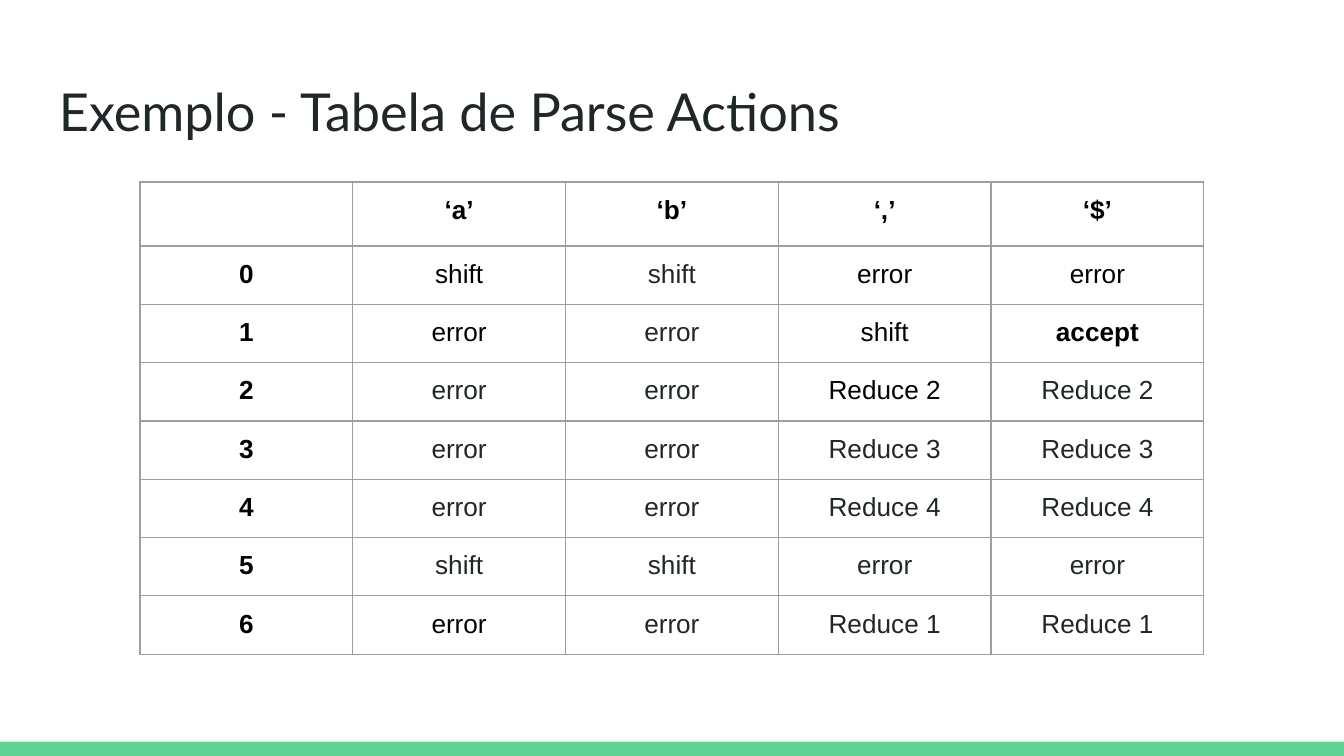
import pptx
import pptx.dml.color
import pptx.enum.shapes
import pptx.enum.text
import pptx.oxml
import pptx.oxml.ns
import pptx.util

Pt = pptx.util.Pt
CENTER = pptx.enum.text.PP_ALIGN.CENTER
LEFT = pptx.enum.text.PP_ALIGN.LEFT

# Content
HEADING = "Exemplo - Tabela de Parse Actions"
ACTIONS = [
    ("", "‘a’", "‘b’", "‘,’", "‘$’"),
    ("0", "shift", "shift", "error", "error"),
    ("1", "error", "error", "shift", "accept"),
    ("2", "error", "error", "Reduce 2", "Reduce 2"),
    ("3", "error", "error", "Reduce 3", "Reduce 3"),
    ("4", "error", "error", "Reduce 4", "Reduce 4"),
    ("5", "shift", "shift", "error", "error"),
    ("6", "error", "error", "Reduce 1", "Reduce 1"),
]
# (row, column) of the actions set in black
BLACK_ACTIONS = {(1, 1), (1, 3), (1, 4), (2, 1), (2, 3), (2, 4), (3, 3), (7, 1)}
COLORS = {"ink": "202729", "black": "000000", "band": "63D297", "border": "9E9E9E"}

# Layout, in points
SLIDE_W, SLIDE_H = 720, 405
BAND_H = 7.7
TABLE_LEFT, TABLE_TOP = 75, 97.5
COLUMN_W, HEADER_H, ROW_H = 114, 34.3, 30.1
INSET = 7.2


def rgb(name):
    return pptx.dml.color.RGBColor.from_string(COLORS[name])


def write(frame, text, font="Arial", size=14, color="ink", bold=False, align=CENTER):
    frame.word_wrap = True
    frame.margin_left = frame.margin_right = Pt(INSET)
    frame.margin_top = frame.margin_bottom = Pt(INSET)
    paragraph = frame.paragraphs[0]
    paragraph.alignment = align
    run = paragraph.add_run()
    run.text = text
    run.font.name, run.font.size, run.font.bold = font, Pt(size), bold
    run.font.color.rgb = rgb(color)


def add_borders(cell):
    properties = cell._tc.get_or_add_tcPr()
    for position, side in enumerate(("lnL", "lnR", "lnT", "lnB")):
        properties.insert(position, pptx.oxml.parse_xml(
            f'<a:{side} {pptx.oxml.ns.nsdecls("a")} w="{Pt(0.75)}"><a:solidFill>'
            f'<a:srgbClr val="{COLORS["border"]}"/></a:solidFill></a:{side}>'))


presentation = pptx.Presentation()
presentation.slide_width, presentation.slide_height = Pt(SLIDE_W), Pt(SLIDE_H)
slide = presentation.slides.add_slide(presentation.slide_layouts[6])

# Bottom band
band = slide.shapes.add_shape(
    pptx.enum.shapes.MSO_SHAPE.RECTANGLE,
    0, Pt(SLIDE_H - BAND_H), Pt(SLIDE_W), Pt(BAND_H))
band.shadow.inherit = False
band.fill.solid()
band.fill.fore_color.rgb = rgb("band")
band.line.fill.background()

# Heading
heading = slide.shapes.add_textbox(Pt(24.5), Pt(35.3), Pt(671), Pt(45.4))
write(heading.text_frame, HEADING, font="Lato", size=28, align=LEFT)

# Table of parse actions
row_count, column_count = len(ACTIONS), len(ACTIONS[0])
table = slide.shapes.add_table(
    row_count, column_count, Pt(TABLE_LEFT), Pt(TABLE_TOP),
    Pt(COLUMN_W * column_count), Pt(HEADER_H + ROW_H * (row_count - 1))).table
table.first_row = table.horz_banding = False
for column in table.columns:
    column.width = Pt(COLUMN_W)
for r, actions in enumerate(ACTIONS):
    table.rows[r].height = Pt(ROW_H if r else HEADER_H)
    for c, action in enumerate(actions):
        cell = table.cell(r, c)
        cell.fill.background()
        add_borders(cell)
        if not action:
            continue
        cell.margin_left = cell.margin_right = Pt(INSET)
        cell.margin_top = cell.margin_bottom = Pt(INSET)
        is_label = r == 0 or c == 0
        is_black = is_label or (r, c) in BLACK_ACTIONS
        write(cell.text_frame, action, color="black" if is_black else "ink",
              bold=is_label or action == "accept")

presentation.save("out.pptx")
